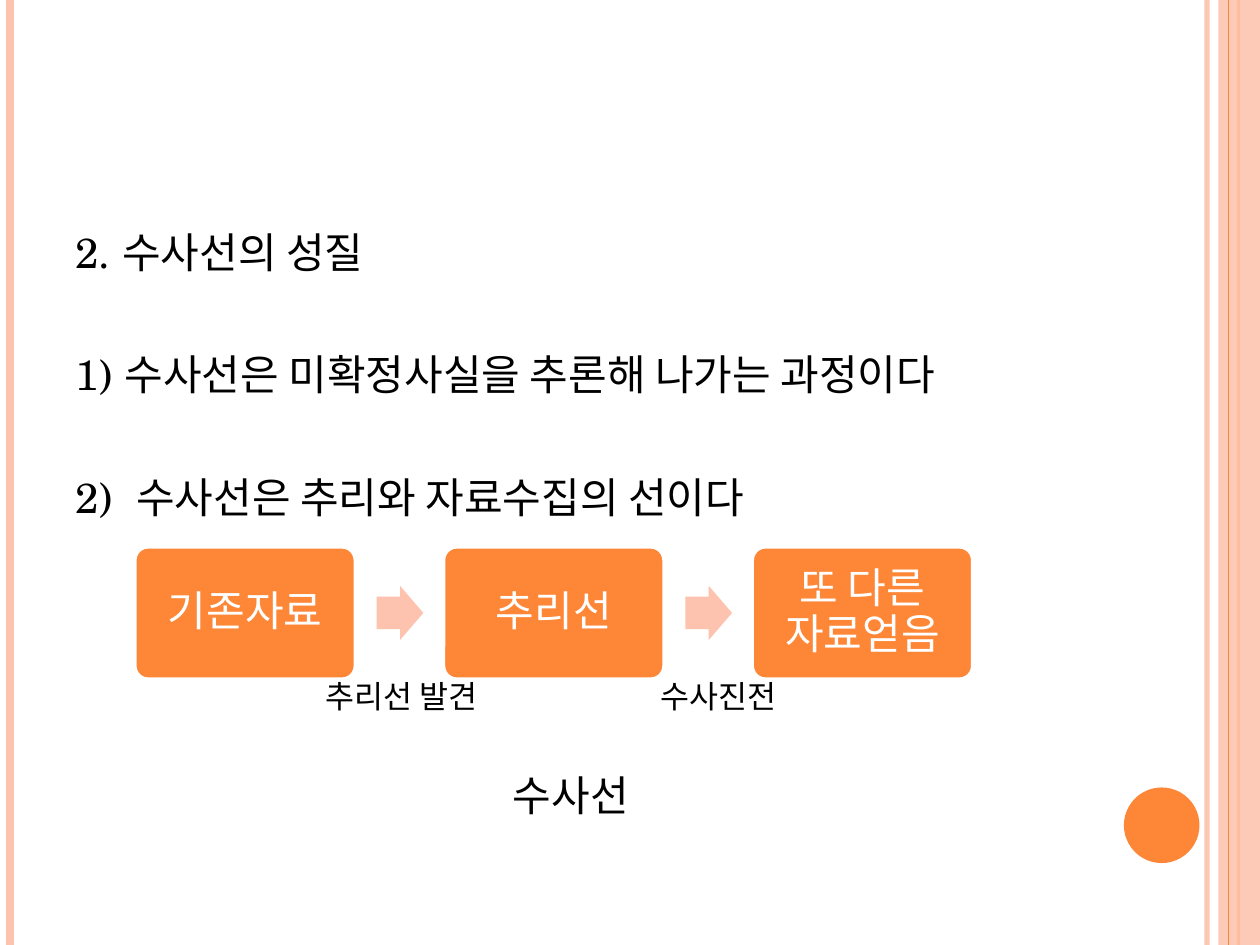
from lxml.etree import SubElement
from pptx import Presentation
from pptx.dml.color import RGBColor
from pptx.enum.shapes import MSO_CONNECTOR, MSO_SHAPE
from pptx.enum.text import MSO_ANCHOR, MSO_AUTO_SIZE, PP_ALIGN
from pptx.oxml.ns import qn
from pptx.util import Inches, Pt

COLORS = {"orange": "FE8637", "peach": "FEC3AE", "black": "000000", "white": "FFFFFF"}
FONT = "TeX Gyre Schola"


def write(paragraph, text, size=24, color="black", align=PP_ALIGN.CENTER, spacing=1.0):
    """Put formatted text in a paragraph."""
    paragraph.alignment = align
    paragraph.line_spacing = spacing
    run = paragraph.add_run()
    run.text = text
    run.font.name = FONT
    run.font.size = Pt(size)
    run.font.color.rgb = RGBColor.from_string(COLORS[color])


def set_opacity(fill, percent):
    color = fill._xPr.find(qn("a:solidFill"))[0]
    SubElement(color, qn("a:alpha")).set("val", str(percent * 1000))


class SlideBuilder:
    def __init__(self, slide):
        self.slide = slide

    def rule(self, x, width, color, opacity=100):
        """Draw a vertical line over the full slide height."""
        line = self.slide.shapes.add_connector(
            MSO_CONNECTOR.STRAIGHT, Inches(x), 0, Inches(x), Inches(7.5))
        line.line.width = Pt(width)
        line.line.color.rgb = RGBColor.from_string(COLORS[color])
        if opacity < 100:
            set_opacity(line.line.fill, opacity)
        SubElement(line._element.spPr, qn("a:effectLst"))

    def shape(self, kind, box, color, adjustments=(), opacity=100):
        shape = self.slide.shapes.add_shape(kind, *map(Inches, box))
        shape.shadow.inherit = False
        shape.fill.solid()
        shape.fill.fore_color.rgb = RGBColor.from_string(COLORS[color])
        if opacity < 100:
            set_opacity(shape.fill, opacity)
        shape.line.fill.background()
        for i, value in enumerate(adjustments):
            shape.adjustments[i] = value
        return shape

    def step(self, box, text):
        """Draw one rounded box of the process."""
        step = self.shape(MSO_SHAPE.ROUNDED_RECTANGLE, box, "orange", [0.1])
        step.line.color.rgb = RGBColor.from_string(COLORS["white"])
        step.line.width = Pt(2)
        frame = step.text_frame
        frame.word_wrap = True
        frame.vertical_anchor = MSO_ANCHOR.MIDDLE
        frame.margin_left = frame.margin_right = Inches(0.1)
        frame.margin_top = frame.margin_bottom = Inches(0.1)
        write(frame.paragraphs[0], text, color="white", spacing=0.9)

    def caption(self, box, text, size):
        frame = self.slide.shapes.add_textbox(*map(Inches, box)).text_frame
        frame.word_wrap = True
        frame.vertical_anchor = MSO_ANCHOR.MIDDLE
        write(frame.paragraphs[0], text, size=size)

    def body(self, box, items):
        """Fill the body placeholder with (text, hanging indent) items."""
        body = self.slide.placeholders[1]
        body.left, body.top, body.width, body.height = map(Inches, box)
        frame = body.text_frame
        frame.auto_size = MSO_AUTO_SIZE.NONE
        frame.vertical_anchor = MSO_ANCHOR.TOP
        for i, (text, indent) in enumerate(items):
            paragraph = frame.add_paragraph() if i else frame.paragraphs[0]
            write(paragraph, text, align=PP_ALIGN.LEFT)
            paragraph.space_before = Pt(41 if i else 6)
            properties = paragraph._p.get_or_add_pPr()
            properties.set("marL", str(Inches(indent)))
            properties.set("indent", str(-Inches(indent)))
            SubElement(properties, qn("a:buNone"))


def main():
    deck = Presentation()
    deck.slide_width, deck.slide_height = Inches(10), Inches(7.5)
    slide = deck.slides.add_slide(deck.slide_layouts[1])
    title = slide.shapes.title._element
    title.getparent().remove(title)
    builder = SlideBuilder(slide)

    # Side decoration
    builder.rule(9.58, 3, "peach", opacity=93)
    builder.rule(0.08, 4.5, "peach")
    builder.rule(9.83, 1.5, "orange")
    builder.shape(MSO_SHAPE.RECTANGLE, (9.67, 0, 0.33, 7.5), "peach", opacity=87)
    builder.rule(9.75, 0.75, "orange")
    builder.shape(MSO_SHAPE.OVAL, (8.92, 6.25, 0.6, 0.6), "orange")

    # Statements
    builder.body((0.5, 1.75, 8.17, 5.33), [
        ("2. 수사선의 성질", 0.3),
        ("1) 수사선은 미확정사실을 추론해 나가는 과정이다", 0.5),
        ("2)  수사선은 추리와 자료수집의 선이다", 0.5),
    ])

    # Process: boxes at an equal pitch with an arrow in each gap
    steps = ["기존자료", "추리선", "또 다른 자료얻음"]
    for i, text in enumerate(steps):
        left = 1.07 + 2.45 * i
        builder.step((left, 4.34, 1.75, 1.05), text)
        if i < len(steps) - 1:
            builder.shape(MSO_SHAPE.RIGHT_ARROW, (left + 1.92, 4.65, 0.37, 0.43),
                          "peach", [0.6, 0.5])

    # Captions below the process
    builder.caption((2.24, 5.17, 1.89, 0.71), "추리선 발견", 18)
    builder.caption((4.76, 5.17, 1.89, 0.71), "수사진전", 18)
    builder.caption((2.8, 5.95, 3.46, 0.71), "수사선", 24)

    deck.save("out.pptx")


if __name__ == "__main__":
    main()
